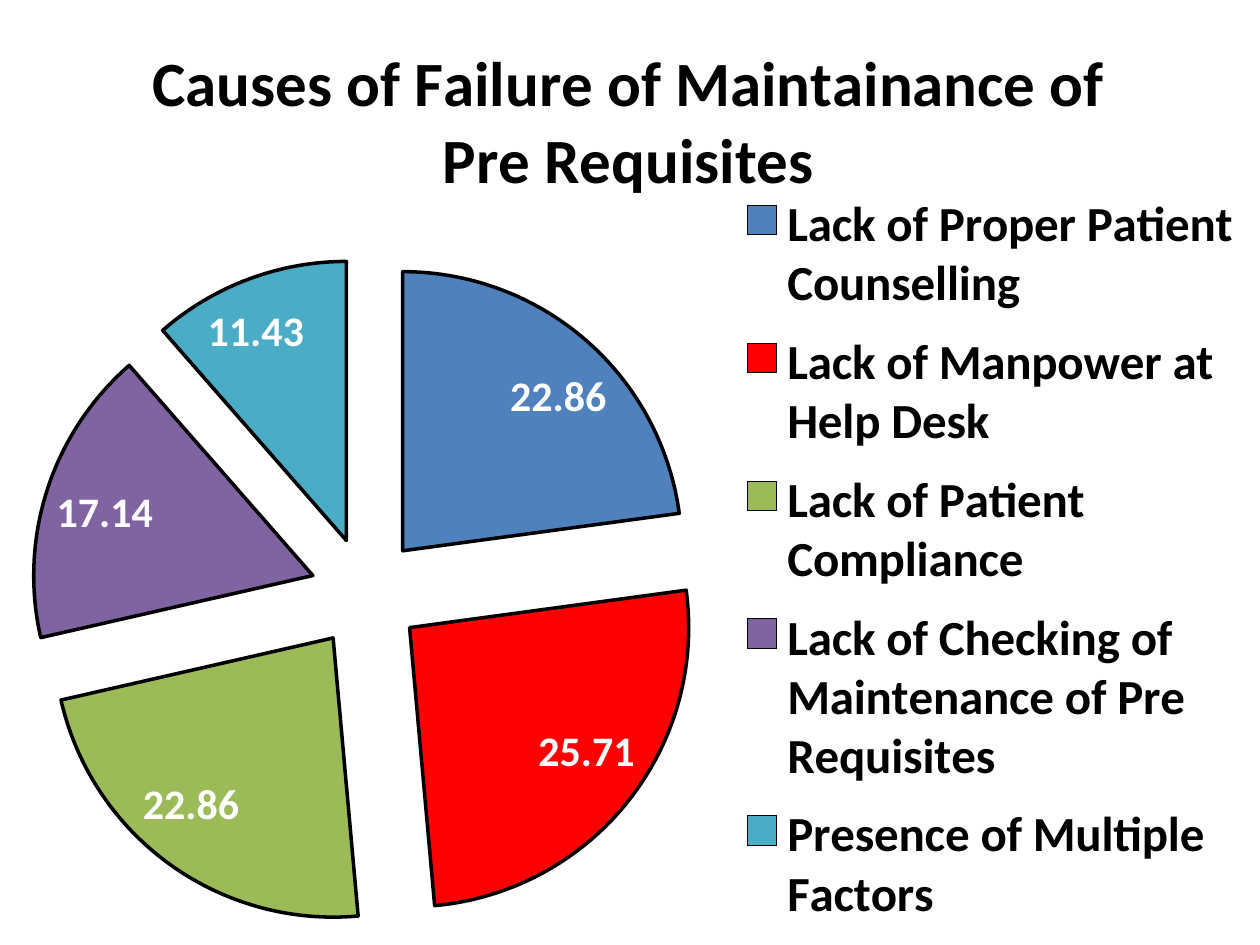
from lxml.etree import SubElement
from pptx import Presentation
from pptx.chart.data import CategoryChartData
from pptx.dml.color import RGBColor
from pptx.enum.chart import XL_CHART_TYPE, XL_LABEL_POSITION, XL_LEGEND_POSITION
from pptx.oxml.ns import qn
from pptx.util import Emu, Pt

TITLE = "Causes of Failure of Maintainance of Pre Requisites"
CAUSES = [
    ("Lack of Proper Patient Counselling ", 22.86, "4F81BD"),
    ("Lack of Manpower at Help Desk ", 25.71, "FF0000"),
    ("Lack of Patient Compliance ", 22.86, "9BBB59"),
    ("Lack of Checking of Maintenance of Pre Requisites ", 17.14, "8064A2"),
    ("Presence of Multiple Factors ", 11.43, "4BACC6"),
]
THEME = {
    "font": "Calibri", "ink": "000000", "label": "FFFFFF",
    "title_size": 36, "legend_size": 28, "label_size": 24, "base_size": 10,
    "outline": 2, "explosion": 20,
}
PX = 914400 // 126
WIDTH, HEIGHT = 1260, 945
TITLE_CORNER = (141, 27)
PIE_BOX = (31, 258, 670, 670)
LEGEND_BOX = (735, 176, 510, 768)


def style(font, size, color, bold=True):
    font.name = THEME["font"]
    font.size = Pt(size)
    font.bold = bold
    font.color.rgb = RGBColor.from_string(color)


def place(element, box, before, inner=False):
    """Give a chart part a manual layout, set ahead of the named child."""
    for old in element.findall(qn("c:layout")):
        element.remove(old)
    layout = SubElement(element, qn("c:layout"))
    manual = SubElement(layout, qn("c:manualLayout"))
    if inner:
        SubElement(manual, qn("c:layoutTarget")).set("val", "inner")
    for side in "xy":
        SubElement(manual, qn(f"c:{side}Mode")).set("val", "edge")
    for side, length, whole in zip("xywh", box, (WIDTH, HEIGHT) * 2):
        SubElement(manual, qn(f"c:{side}")).set("val", f"{length / whole:.4f}")
    element.find(qn(before)).addprevious(layout)


def add_pie(page):
    data = CategoryChartData(number_format="General")
    data.categories = [name for name, _, _ in CAUSES]
    data.add_series("Series 1", [value for _, value, _ in CAUSES])
    chart = page.shapes.add_chart(
        XL_CHART_TYPE.PIE, 0, 0, Emu(WIDTH * PX), Emu(HEIGHT * PX), data).chart
    style(chart.font, THEME["base_size"], THEME["ink"], bold=False)
    return chart


def add_title(chart):
    chart.has_title = True
    title = chart.chart_title
    span = title.text_frame.paragraphs[0].add_run()
    span.text = TITLE
    style(span.font, THEME["title_size"], THEME["ink"])
    title.include_in_layout = False
    place(title._element, TITLE_CORNER, "c:overlay")


def add_legend(chart):
    chart.has_legend = True
    legend = chart.legend
    legend.position = XL_LEGEND_POSITION.RIGHT
    legend.include_in_layout = False
    style(legend.font, THEME["legend_size"], THEME["ink"])
    place(legend._element, LEGEND_BOX, "c:overlay")


def format_slices(chart):
    plot = chart.plots[0]
    plot.vary_by_categories = True
    series = plot.series[0]
    for index, (_, _, color) in enumerate(CAUSES):
        slice_format = series.points[index].format
        slice_format.fill.solid()
        slice_format.fill.fore_color.rgb = RGBColor.from_string(color)
        slice_format.line.color.rgb = RGBColor.from_string(THEME["ink"])
        slice_format.line.width = Pt(THEME["outline"])
    explosion = SubElement(series._element, qn("c:explosion"))
    explosion.set("val", str(THEME["explosion"]))
    series._element.find(qn("c:dPt")).addprevious(explosion)

    labels = series.data_labels
    labels.show_value = True
    labels.show_percentage = False
    labels.position = XL_LABEL_POSITION.BEST_FIT
    style(labels.font, THEME["label_size"], THEME["label"])
    place(chart._chartSpace.chart.plotArea, PIE_BOX, "c:pieChart", inner=True)


def main():
    deck = Presentation()
    deck.slide_width, deck.slide_height = Emu(WIDTH * PX), Emu(HEIGHT * PX)
    page = deck.slides.add_slide(deck.slide_layouts[6])
    chart = add_pie(page)
    add_title(chart)
    add_legend(chart)
    format_slices(chart)
    deck.save("out.pptx")


if __name__ == "__main__":
    main()
